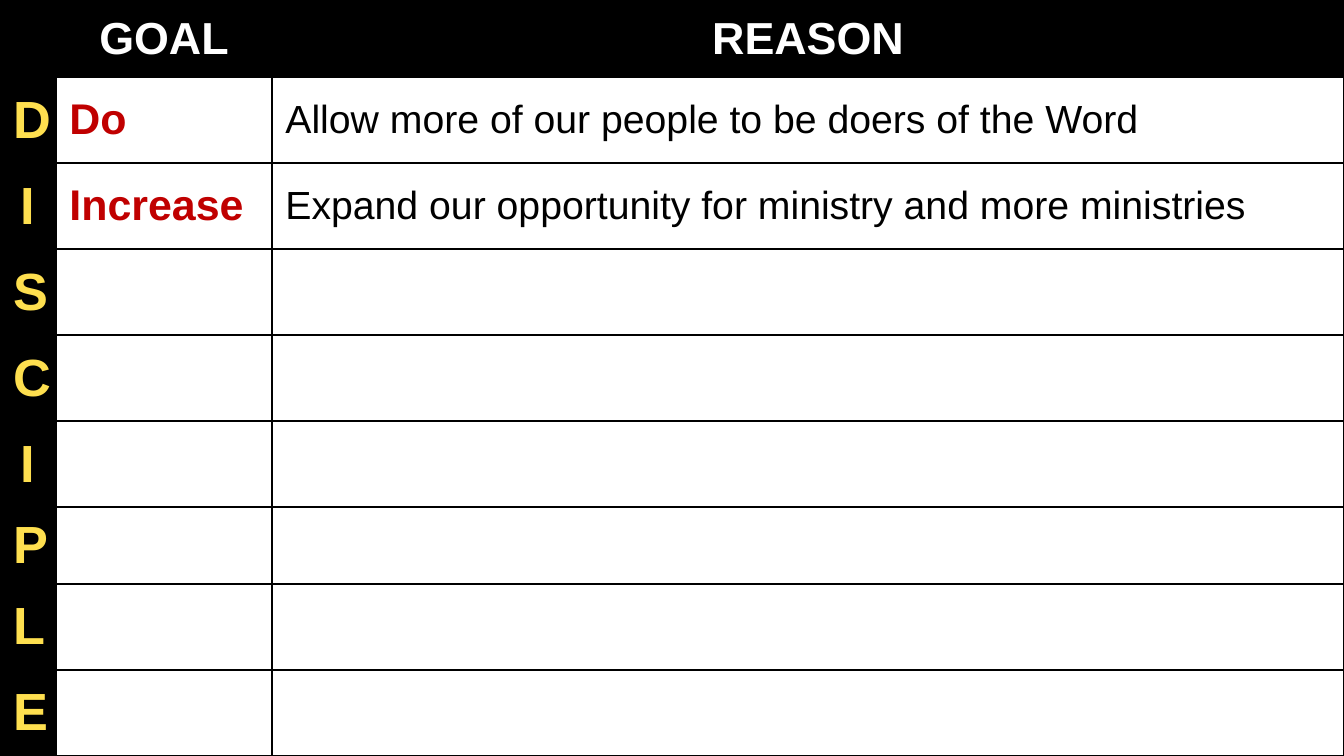
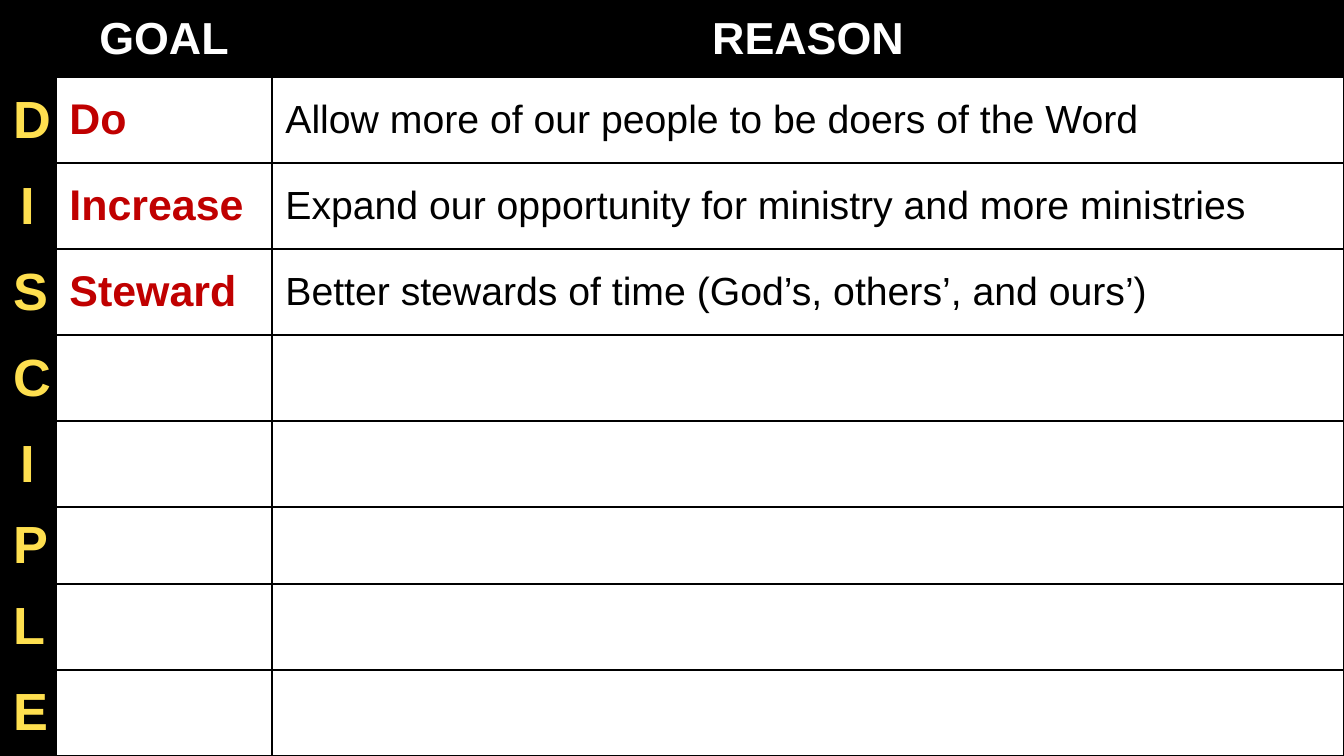
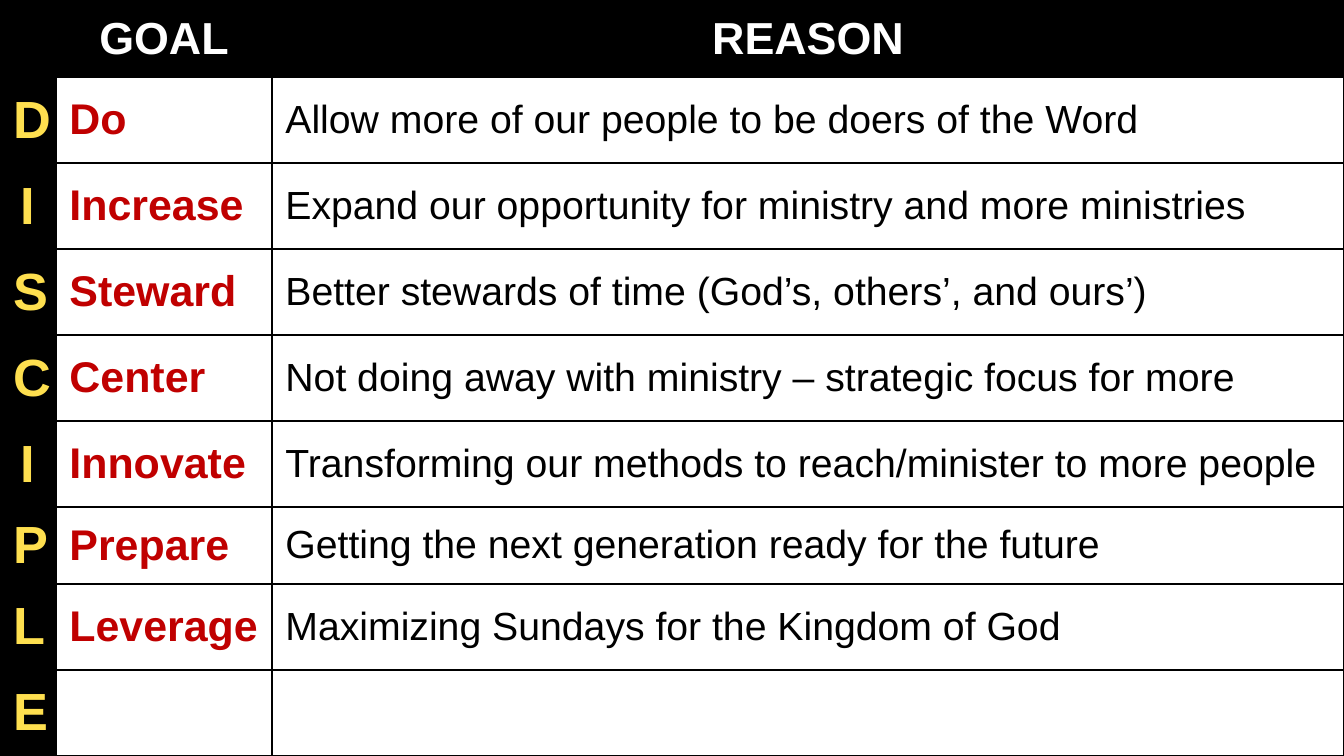
from lxml.etree import SubElement
from pptx import Presentation
from pptx.dml.color import RGBColor
from pptx.enum.text import MSO_ANCHOR, PP_ALIGN
from pptx.oxml.ns import qn
from pptx.util import Pt

PX = 914400 / 134.4
WIDTH, HEIGHT = 1344, 756
BLACK, WHITE, YELLOW, RED = "000000", "FFFFFF", "FEDF4F", "C00000"
COLUMN_WIDTHS = [56, 216, 1072]
ROW_HEIGHTS = [77] + [86] * 5 + [77] + [86] * 2
ACRONYM = "DISCIPLE"
GOALS = [
    ("Do", "Allow more of our people to be doers of the Word"),
    ("Increase", "Expand our opportunity for ministry and more ministries"),
    ("Steward", "Better stewards of time (God’s, others’, and ours’)"),
    ("Center", "Not doing away with ministry – strategic focus for more"),
    ("Innovate", "Transforming our methods to reach/minister to more people"),
    ("Prepare", "Getting the next generation ready for the future"),
    ("Leverage", "Maximizing Sundays for the Kingdom of God"),
]
GOALS_SHOWN = [2, 3, 7]

HEADER_FORMAT = dict(size=24, color=WHITE, align=PP_ALIGN.CENTER)
COLUMN_FORMATS = [
    dict(size=28, color=YELLOW, align=PP_ALIGN.CENTER),
    dict(size=23, color=RED),
    dict(size=21, color=BLACK, bold=False),
]


def rgb(color):
    return RGBColor.from_string(color)


def write(cell, text, size, color, bold=True, align=PP_ALIGN.LEFT):
    paragraph = cell.text_frame.paragraphs[0]
    paragraph.alignment = align
    run = paragraph.add_run()
    run.text = text
    run.font.name = "Arial"
    run.font.size = Pt(size)
    run.font.bold = bold
    run.font.color.rgb = rgb(color)


presentation = Presentation()
presentation.slide_width = round(WIDTH * PX)
presentation.slide_height = round(HEIGHT * PX)

for shown in GOALS_SHOWN:
    slide = presentation.slides.add_slide(presentation.slide_layouts[6])
    shape = slide.shapes.add_table(
        len(ROW_HEIGHTS), len(COLUMN_WIDTHS), 0, 0, round(WIDTH * PX), round(HEIGHT * PX)
    )
    table = shape.table
    table.horz_banding = False
    for column, width in zip(table.columns, COLUMN_WIDTHS):
        column.width = round(width * PX)
    for row, height in zip(table.rows, ROW_HEIGHTS):
        row.height = round(height * PX)

    contents = [("", "GOAL", "REASON")]
    for index, letter in enumerate(ACRONYM):
        goal, reason = GOALS[index] if index < shown else ("", "")
        contents.append((letter, goal, reason))

    for row_index, texts in enumerate(contents):
        for column_index, text in enumerate(texts):
            cell = table.cell(row_index, column_index)
            cell.vertical_anchor = MSO_ANCHOR.MIDDLE
            properties = cell._tc.get_or_add_tcPr()
            for side in ("a:lnL", "a:lnR", "a:lnT", "a:lnB"):
                border = SubElement(properties, qn(side), w=str(Pt(1)))
                border_fill = SubElement(border, qn("a:solidFill"))
                SubElement(border_fill, qn("a:srgbClr"), val=BLACK)
            if row_index == 0 or column_index == 0:
                cell.fill.solid()
                cell.fill.fore_color.rgb = rgb(BLACK)
            else:
                cell.fill.background()
            if text:
                text_format = HEADER_FORMAT if row_index == 0 else COLUMN_FORMATS[column_index]
                write(cell, text, **text_format)

presentation.save("out.pptx")
